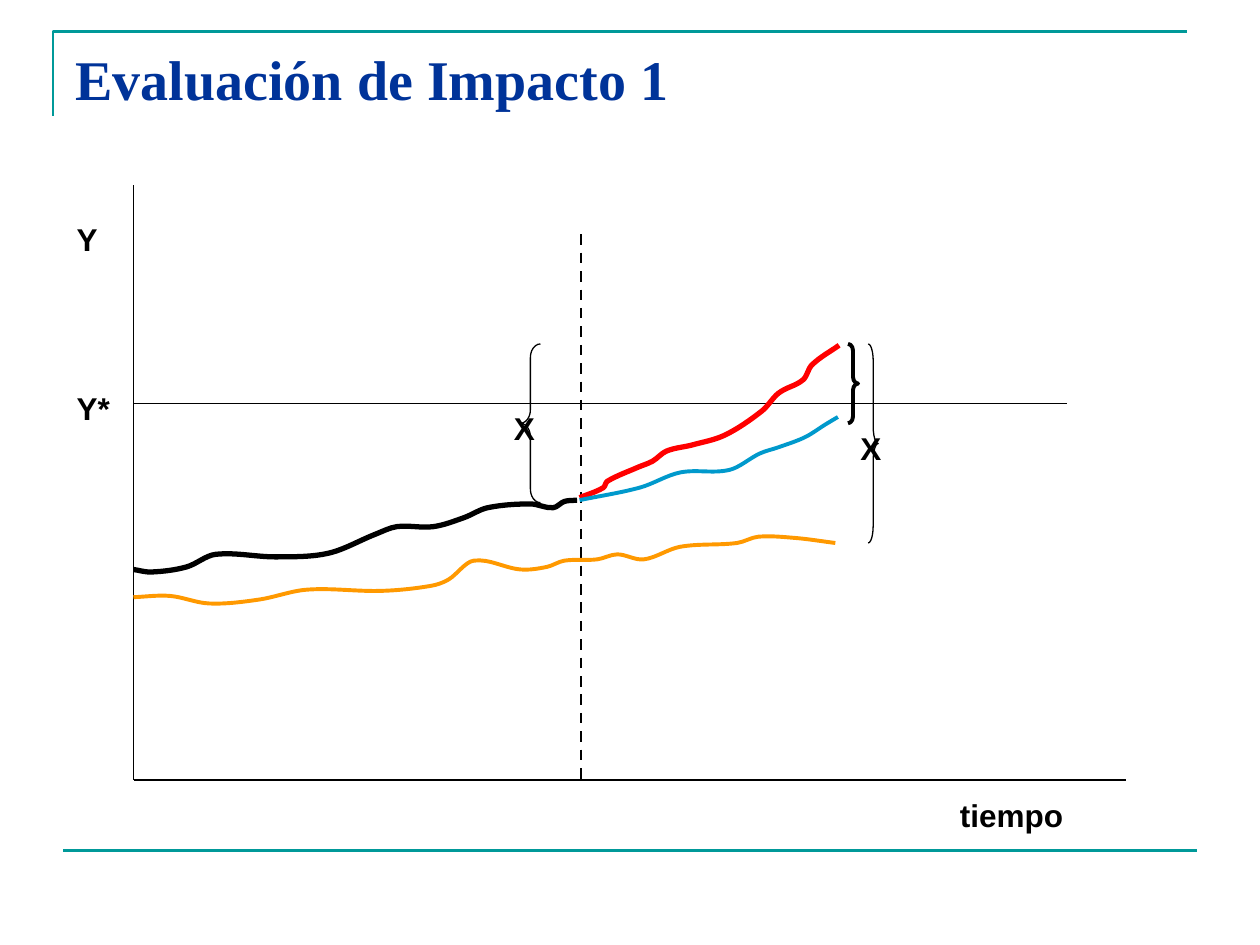
from lxml import etree
from pptx import Presentation
from pptx import util as u
from pptx.dml.color import RGBColor
from pptx.enum import dml, shapes, text
from pptx.oxml.ns import qn

BLACK, TEAL, NAVY = "000000", "009999", "003399"
RED, BLUE, ORANGE = "FF0000", "0099CC", "FF9900"

# Landmarks of the diagram, in inches
AXIS_X, AXIS_TOP, AXIS_Y, AXIS_END = 1.06, 1.47, 6.19, 8.94
PROGRAM_X, PROGRAM_TOP = 4.61, 1.86
TARGET_Y, TARGET_END = 3.2, 8.47
BRACE_TOP = 2.73
LABEL_X = 0.51

# The points each trend passes through; the curve between them is computed.
BEFORE = [(AXIS_X, 4.52), (1.2, 4.54), (1.48, 4.5), (1.71, 4.4), (2.2, 4.42),
          (2.61, 4.39), (2.98, 4.24), (3.15, 4.18), (3.44, 4.18), (3.68, 4.11),
          (3.87, 4.03), (4.21, 4), (4.39, 4.03), (4.48, 3.98), (4.58, 3.97)]
WITH_PROGRAM = [(4.6, 3.95), (4.79, 3.87), (4.82, 3.82), (5.06, 3.71), (5.18, 3.66),
                (5.29, 3.58), (5.5, 3.53), (5.76, 3.45), (6.05, 3.26), (6.18, 3.12),
                (6.38, 3.01), (6.44, 2.9), (6.66, 2.74)]
WITHOUT_PROGRAM = [(4.6, 3.97), (5.08, 3.87), (5.4, 3.75), (5.79, 3.73), (6.03, 3.6),
                   (6.18, 3.55), (6.39, 3.47), (6.55, 3.37), (6.65, 3.31)]
COMPARISON = [(AXIS_X, 4.74), (1.35, 4.73), (1.66, 4.79), (2.05, 4.76), (2.44, 4.68),
              (3.03, 4.69), (3.42, 4.65), (3.56, 4.6), (3.76, 4.45), (4.13, 4.52),
              (4.34, 4.5), (4.48, 4.45), (4.74, 4.44), (4.9, 4.4), (5.11, 4.44),
              (5.4, 4.34), (5.85, 4.31), (6.02, 4.26), (6.31, 4.27), (6.63, 4.31)]


def rgb(color):
    return RGBColor.from_string(color)


def smooth(points):
    """Return the path with two Bézier control points between each pair.

    The slope at a point is that of the line joining its two neighbours.
    """
    before = [points[0]] + points[:-1]
    after = points[1:] + [points[-1]]
    slopes = [(y2 - y1) / (x2 - x1) for (x1, y1), (x2, y2) in zip(before, after)]
    path = [points[0]]
    for i in range(len(points) - 1):
        (x1, y1), (x2, y2) = points[i], points[i + 1]
        third = (x2 - x1) / 3
        path += [(x1 + third, y1 + third * slopes[i]),
                 (x2 - third, y2 - third * slopes[i + 1]),
                 (x2, y2)]
    return path


class SlideBuilder:
    title_font, body_font = "Times New Roman", "Arial"

    def __init__(self, slide):
        self.s = slide

    def style_font(self, p, name, size, color):
        p.font.name, p.font.size, p.font.bold = name, u.Pt(size), True
        p.font.color.rgb = rgb(color)

    def style_line(self, sp, color, width):
        sp.line.color.rgb = rgb(color)
        sp.line.width = u.Pt(width)

    def style_outline(self, sp, color, width):
        sp.shadow.inherit = False
        sp.fill.background()
        self.style_line(sp, color, width)

    def title(self, words, x, y, w, h):
        sp = self.s.shapes.title
        sp.left, sp.top, sp.width, sp.height = map(u.Inches, (x, y, w, h))
        tf = sp.text_frame
        tf.text = words
        tf.vertical_anchor = text.MSO_ANCHOR.TOP
        p = tf.paragraphs[0]
        p.alignment = text.PP_ALIGN.LEFT
        self.style_font(p, self.title_font, 32, NAVY)

    def label(self, words, x, y, w, h=0.4):
        sp = self.s.shapes.add_textbox(*map(u.Inches, (x, y, w, h)))
        tf = sp.text_frame
        tf.word_wrap = True
        tf.auto_size = text.MSO_AUTO_SIZE.SHAPE_TO_FIT_TEXT
        tf.text = words
        self.style_font(tf.paragraphs[0], self.body_font, 18, BLACK)

    def line(self, x1, y1, x2, y2, color=BLACK, width=0.75, dash=None):
        sp = self.s.shapes.add_connector(
            shapes.MSO_CONNECTOR.STRAIGHT, *map(u.Inches, (x1, y1, x2, y2)))
        self.style_line(sp, color, width)
        sp.line.dash_style = dash
        etree.SubElement(sp._element.spPr, qn("a:effectLst"))

    def polyline(self, points, color, width):
        start, *rest = [(u.Inches(x), u.Inches(y)) for x, y in points]
        builder = self.s.shapes.build_freeform(*start)
        builder.add_line_segments(rest, close=False)
        sp = builder.convert_to_shape()
        self.style_outline(sp, color, width)
        return sp

    def curve(self, points, color, width):
        """Draw the smoothed path, each three steps joined into one Bézier segment."""
        sp = self.polyline(smooth(points), color, width)
        steps = list(sp._element.iter(qn("a:lnTo")))
        for i in range(0, len(steps), 3):
            bezier = etree.Element(qn("a:cubicBezTo"))
            steps[i].addprevious(bezier)
            for step in steps[i:i + 3]:
                bezier.append(step[0])
                step.getparent().remove(step)

    def brace(self, kind, x, y, w, h, bend, width):
        sp = self.s.shapes.add_shape(kind, *map(u.Inches, (x, y, w, h)))
        sp.adjustments[0] = bend
        self.style_outline(sp, BLACK, width)


def draw_frame(b):
    b.polyline([(0.42, 0.92), (0.42, 0.25), (9.42, 0.25)], TEAL, 1.5)
    b.line(0.5, 6.75, 9.5, 6.75, TEAL, 1.5)
    b.title("Evaluación de Impacto 1", 0.5, 0.3, 9, 0.77)


def draw_axes(b):
    b.line(AXIS_X, AXIS_TOP, AXIS_X, AXIS_Y)
    b.line(AXIS_X, AXIS_Y, AXIS_END, AXIS_Y)
    b.line(PROGRAM_X, PROGRAM_TOP, PROGRAM_X, AXIS_Y, width=1.5, dash=dml.MSO_LINE.DASH)
    b.line(AXIS_X, TARGET_Y, TARGET_END, TARGET_Y)


def draw_trends(b):
    for points, color, width in [
        (BEFORE, BLACK, 3),
        (WITH_PROGRAM, RED, 3),
        (WITHOUT_PROGRAM, BLUE, 2.25),
        (COMPARISON, ORANGE, 2.25),
    ]:
        b.curve(points, color, width)


def draw_braces(b):
    left, right = shapes.MSO_SHAPE.LEFT_BRACE, shapes.MSO_SHAPE.RIGHT_BRACE
    for kind, x, w, h, bend, width in [
        (left, 4.13, 0.16, 1.26, 0.67, 0.75),
        (right, 6.73, 0.08, 0.63, 0.67, 2.25),
        (right, 6.89, 0.08, 1.58, 1.68, 0.75),
    ]:
        b.brace(kind, x, BRACE_TOP, w, h, bend, width)


def draw_labels(b):
    for words, x, y, w in [
        ("X", 3.98, TARGET_Y, 0.39),
        ("X", 6.73, 3.36, 0.39),
        ("tiempo", 7.52, 6.27, 1.1),
        ("Y", LABEL_X, 1.7, 0.47),
        ("Y*", LABEL_X, 3.04, 0.47),
    ]:
        b.label(words, x, y, w)


def main():
    prs = Presentation()
    prs.slide_width, prs.slide_height = u.Inches(10), u.Inches(7.5)
    title_only = prs.slide_layouts[5]
    b = SlideBuilder(prs.slides.add_slide(title_only))
    for draw in (draw_frame, draw_axes, draw_trends, draw_braces, draw_labels):
        draw(b)
    prs.save("out.pptx")


if __name__ == "__main__":
    main()
